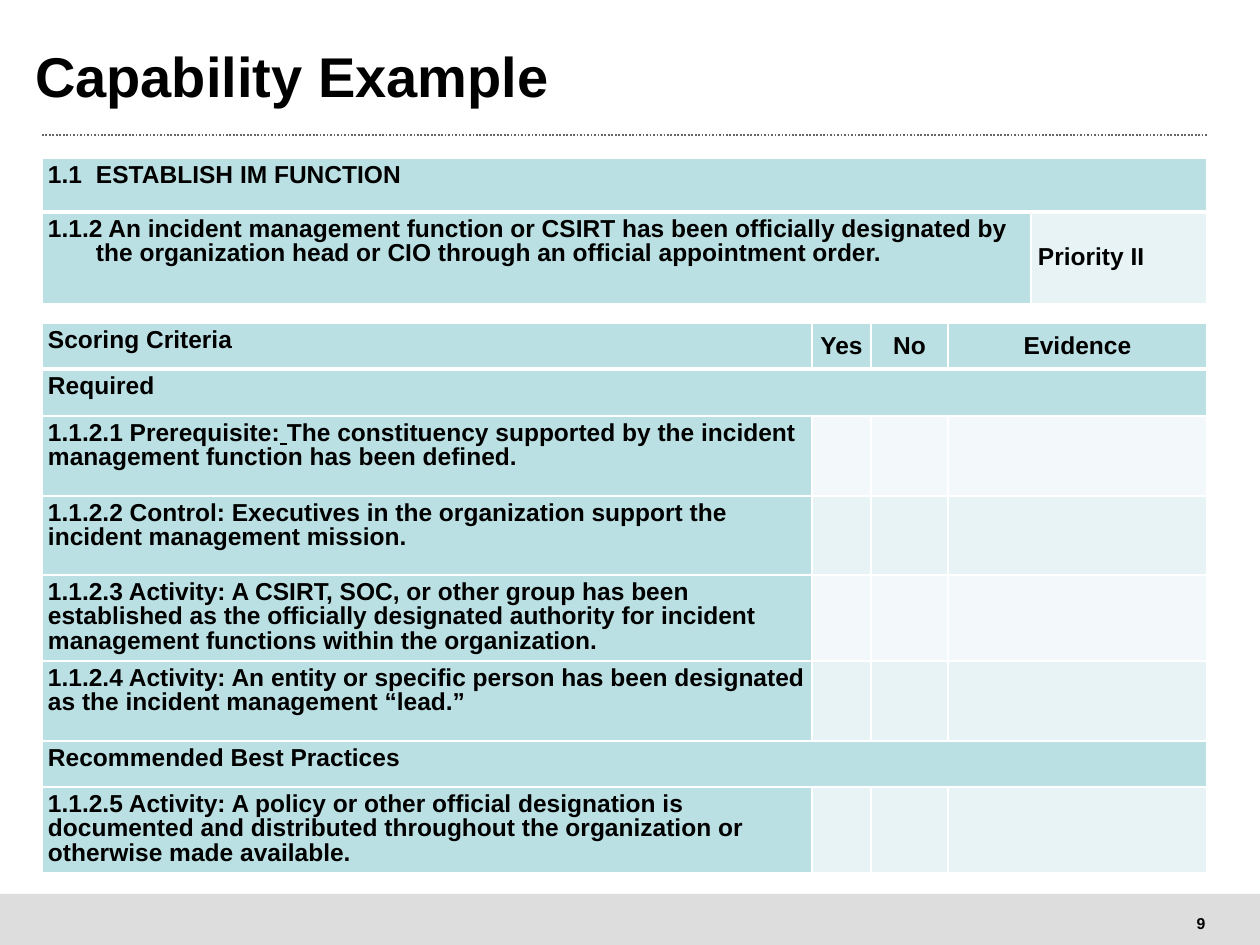
import pptx
import pptx.util
import pptx.dml.color
import pptx.enum.dml
import pptx.enum.shapes
import pptx.enum.text
import pptx.oxml
import pptx.oxml.ns

ALIGN = pptx.enum.text.PP_ALIGN
ANCHOR = pptx.enum.text.MSO_ANCHOR
Pt = pptx.util.Pt


class Theme:
    font = "Arial"
    text = "000000"
    label = "BBE0E3"
    bands = ("F3F9FA", "E7F3F4")
    border = "FFFFFF"
    footer = "DDDDDD"
    rule = "666666"
    title_size = 32
    body_size = 14
    page_size = 9
    thin, thick = 1, 3


def px(n):
    return round(n * 914400 / 126)


def rgb(code):
    return pptx.dml.color.RGBColor.from_string(code)


def add_xml(parent, xml):
    head, tail = xml.split(" ", 1)
    node = pptx.oxml.parse_xml(f'{head} {pptx.oxml.ns.nsdecls("a")} {tail}')
    parent.append(node)


def write(frame, parts, size=Theme.body_size, align=ALIGN.LEFT, space=None):
    """Fill the first paragraph with runs; a lone space is underlined."""
    par = frame.paragraphs[0]
    par.alignment = align
    par.line_spacing = space
    for part in parts:
        run = par.add_run()
        run.text = part
        run.font.name = Theme.font
        run.font.size = Pt(size)
        run.font.bold = True
        run.font.underline = True if part == " " else None
        run.font.color.rgb = rgb(Theme.text)
    return par


def add_label(slide, box, text, size, align, space=None, wrap=True):
    frame = slide.shapes.add_textbox(*map(px, box)).text_frame
    frame.word_wrap = wrap
    frame.vertical_anchor = ANCHOR.MIDDLE
    frame.margin_left = frame.margin_right = 0
    frame.margin_top = frame.margin_bottom = 0
    write(frame, [text], size, align, space)


def add_footer(slide):
    bar = slide.shapes.add_shape(
        pptx.enum.shapes.MSO_SHAPE.RECTANGLE, *map(px, (0, 894, 1260, 51)))
    bar.shadow.inherit = False
    bar.fill.solid()
    bar.fill.fore_color.rgb = rgb(Theme.footer)
    bar.line.fill.background()
    add_label(slide, (1179, 907, 44, 32), "9", Theme.page_size,
              ALIGN.CENTER, wrap=False)


def add_rule(slide, left, right, top):
    rule = slide.shapes.add_connector(
        pptx.enum.shapes.MSO_CONNECTOR.STRAIGHT,
        *map(px, (left, top, right, top)))
    rule.line.color.rgb = rgb(Theme.rule)
    rule.line.width = Pt(1)
    rule.line.dash_style = pptx.enum.dml.MSO_LINE.ROUND_DOT
    add_xml(rule._element.spPr, "<a:effectLst />")


def style_cell(cell, row, fill):
    """Set the borders first, since the fill must follow them."""
    widths = {"L": Theme.thin, "R": Theme.thin,
              "T": Theme.thick if row == 1 else Theme.thin,
              "B": Theme.thick if row == 0 else Theme.thin}
    props = cell._tc.get_or_add_tcPr()
    for side in "LRTB":
        add_xml(props, f'<a:ln{side} w="{Pt(widths[side])}"><a:solidFill>'
                f'<a:srgbClr val="{Theme.border}"/></a:solidFill></a:ln{side}>')
    cell.fill.solid()
    cell.fill.fore_color.rgb = rgb(fill)
    cell.margin_left = cell.margin_right = px(6)
    cell.margin_top = cell.margin_bottom = px(6)


def add_grid(slide, left, top, cols, rows, spans):
    """Label the header, first column and spanned rows; band the rest."""
    grid = slide.shapes.add_table(
        len(rows), len(cols),
        *map(px, (left, top, sum(cols), sum(rows)))).table
    for col, width in zip(grid.columns, cols):
        col.width = px(width)
    for row, height in zip(grid.rows, rows):
        row.height = px(height)
    for r in range(len(rows)):
        for c in range(len(cols)):
            label = r == 0 or c == 0 or r in spans
            style_cell(grid.cell(r, c), r,
                       Theme.label if label else Theme.bands[r % 2])
    for r in spans:
        grid.cell(r, 0).merge(grid.cell(r, len(cols) - 1))
    return grid


def add_goal(slide):
    grid = add_grid(slide, 42, 158, (989, 176), (54, 92), (0,))
    head = write(grid.cell(0, 0).text_frame, ["1.1\tESTABLISH IM FUNCTION"],
                 space=Pt(14))
    add_xml(head._p.get_or_add_pPr(),
            f'<a:tabLst ><a:tab pos="{px(48)}" algn="l"/></a:tabLst>')
    goal = write(grid.cell(1, 0).text_frame, [
        "1.1.2 An incident management function or CSIRT has been officially "
        "designated by the organization head or CIO through an official "
        "appointment order."], space=Pt(14))
    props = goal._p.get_or_add_pPr()
    props.set("marL", str(px(48)))
    props.set("indent", str(-px(48)))
    rank = grid.cell(1, 1)
    rank.vertical_anchor = ANCHOR.MIDDLE
    rank.margin_left = px(7)
    write(rank.text_frame, ["Priority II"], space=Pt(14.5))


def add_scores(slide):
    labels = (
        ["Scoring Criteria"],
        ["Required"],
        ["1.1.2.1 Prerequisite:", " ", "The constituency supported by the "
         "incident management function has been defined."],
        ["1.1.2.2 Control: Executives in the organization support the "
         "incident management mission."],
        ["1.1.2.3 Activity: A CSIRT, SOC, or other group has been established "
         "as the officially designated authority for incident management "
         "functions within the organization."],
        ["1.1.2.4 Activity: An entity or specific person has been designated "
         "as the incident management “lead.”"],
        ["Recommended Best Practices"],
        ["1.1.2.5 Activity: A policy or other official designation is "
         "documented and distributed throughout the organization or "
         "otherwise made available."],
    )
    grid = add_grid(slide, 42, 323, (770, 59, 77, 259),
                    (46, 47, 80, 79, 86, 80, 46, 86), (1, 6))
    for r, parts in enumerate(labels):
        write(grid.cell(r, 0).text_frame, parts, space=Pt(14))
    for c, name in enumerate(("Yes", "No", "Evidence"), 1):
        cell = grid.cell(0, c)
        cell.vertical_anchor = ANCHOR.MIDDLE
        write(cell.text_frame, [name], align=ALIGN.CENTER)


def main():
    deck = pptx.Presentation()
    deck.slide_width, deck.slide_height = px(1260), px(945)
    slide = deck.slides.add_slide(deck.slide_layouts[6])
    # Frame of the page
    add_footer(slide)
    add_rule(slide, 42, 1207, 135)
    add_label(slide, (35, 32, 1168, 98), "Capability Example",
              Theme.title_size, ALIGN.LEFT, 0.8)
    # Tables
    add_goal(slide)
    add_scores(slide)
    deck.save("out.pptx")


if __name__ == "__main__":
    main()
